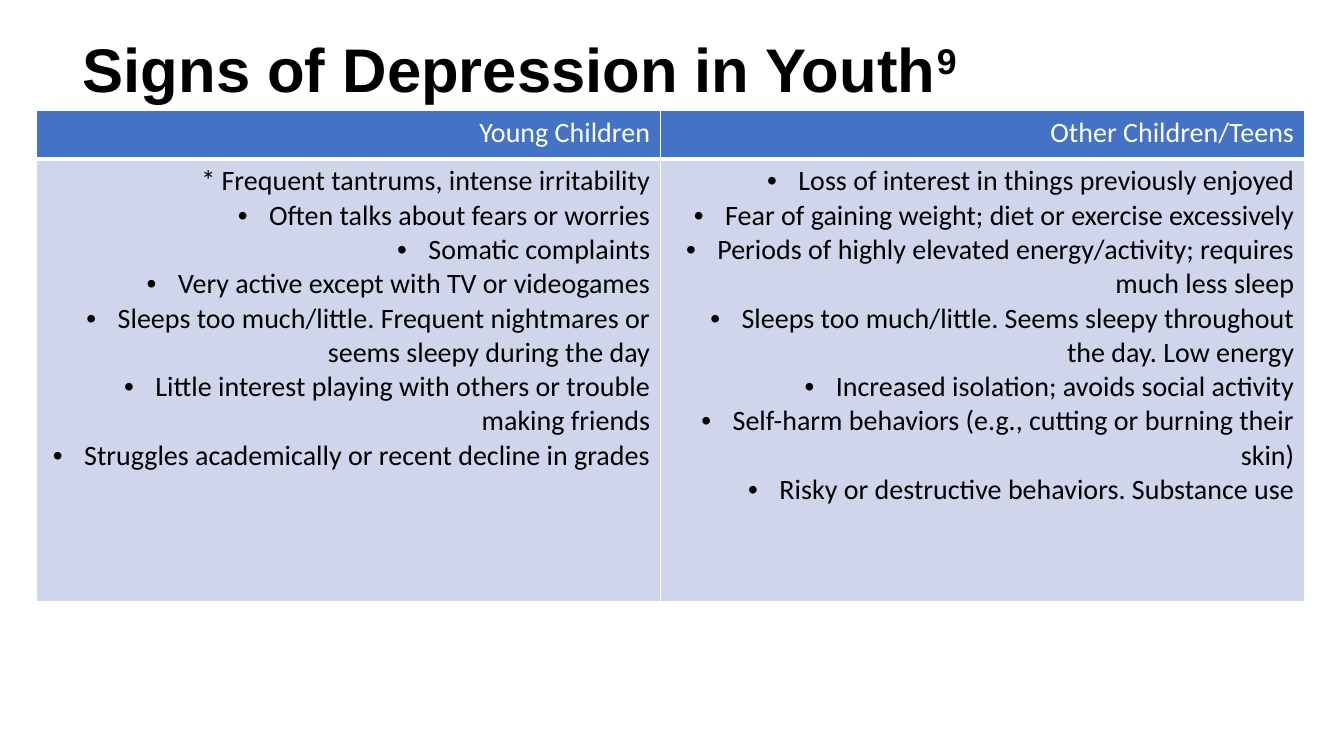
from lxml import etree
from pptx import Presentation
from pptx import util as u
from pptx.dml import color
from pptx.enum import text
from pptx.oxml import ns


def rgb(code):
    return color.RGBColor.from_string(code)


class Deck:
    face, size = "Calibri", 20
    ink, paper, head, body = "000000", "FFFFFF", "4472C4", "CFD5EA"
    indent = u.Cm(0.79)

    def __init__(self, wide, high):
        self.prs = Presentation()
        self.prs.slide_width, self.prs.slide_height = u.Cm(wide), u.Cm(high)
        self.slide = self.prs.slides.add_slide(self.prs.slide_layouts[6])

    def style(self, par, face, size, tint, bold=False):
        font = par.font
        font.name, font.size, font.bold = face, u.Pt(size), bold
        font.color.rgb = rgb(tint)

    def title(self, words, note, left, top, wide, high):
        box = self.slide.shapes.add_textbox(*map(u.Cm, (left, top, wide, high)))
        frame = box.text_frame
        frame.word_wrap = True
        frame.vertical_anchor = text.MSO_ANCHOR.MIDDLE
        frame.margin_left = frame.margin_right = u.Cm(0.13)
        frame.margin_top = frame.margin_bottom = u.Cm(0.13)
        par = frame.paragraphs[0]
        par.line_spacing = 0.9
        par.add_run().text = words
        mark = par.add_run()
        mark.text = note
        mark._r.get_or_add_rPr().set("baseline", "30000")
        self.style(par, "Arial", 44, self.ink, True)

    def bullet(self, par):
        props = par._p.get_or_add_pPr()
        props.set("marL", str(self.indent))
        props.set("indent", str(-self.indent))
        etree.SubElement(props, ns.qn("a:buFont")).set("typeface", "Arial")
        etree.SubElement(props, ns.qn("a:buChar")).set("char", "•")

    def edge(self, cell, side, points):
        props = cell._tc.get_or_add_tcPr()
        line = etree.SubElement(props, ns.qn("a:ln" + side), w=str(u.Pt(points)))
        fill = etree.SubElement(line, ns.qn("a:solidFill"))
        etree.SubElement(fill, ns.qn("a:srgbClr"), val=self.paper)

    def cell(self, cell, lines, fill, tint, edges):
        for side, points in edges.items():
            self.edge(cell, side, points)
        cell.fill.solid()
        cell.fill.fore_color.rgb = rgb(fill)
        frame = cell.text_frame
        for i, (words, dot) in enumerate(lines):
            par = frame.add_paragraph() if i else frame.paragraphs[0]
            par.text = words
            par.alignment = text.PP_ALIGN.RIGHT
            if dot:
                self.bullet(par)
            self.style(par, self.face, self.size, tint)

    def table(self, heads, lists, left, top, cols, rows):
        place = map(u.Cm, (left, top, sum(cols), sum(rows)))
        grid = self.slide.shapes.add_table(len(rows), len(cols), *place).table
        grid.first_row = grid.horz_banding = False
        for row, high in zip(grid.rows, rows):
            row.height = u.Cm(high)
        for i, wide in enumerate(cols):
            grid.columns[i].width = u.Cm(wide)
            self.cell(grid.cell(0, i), [(heads[i], False)], self.head,
                      self.paper, {"L": 1, "R": 1, "T": 1, "B": 3})
            self.cell(grid.cell(1, i), lists[i], self.body,
                      self.ink, {"L": 1, "R": 1, "T": 3, "B": 1})


def dots(*lines):
    return [(line, True) for line in lines]


def main():
    deck = Deck(33.87, 19.05)

    # Title with its reference number
    deck.title("Signs of Depression in Youth", "9", 1.96, 0, 29.21, 3.68)

    # Signs by age group
    young = [("* Frequent tantrums, intense irritability", False)] + dots(
        "Often talks about fears or worries",
        "Somatic complaints",
        "Very active except with TV or videogames",
        "Sleeps too much/little. Frequent nightmares or seems sleepy during the day",
        "Little interest playing with others or trouble making friends",
        "Struggles academically or recent decline in grades")
    teens = dots(
        "Loss of interest in things previously enjoyed",
        "Fear of gaining weight; diet or exercise excessively",
        "Periods of highly elevated energy/activity; requires much less sleep",
        "Sleeps too much/little. Seems sleepy throughout the day. Low energy",
        "Increased isolation; avoids social activity",
        "Self-harm behaviors (e.g., cutting or burning their skin)",
        "Risky or destructive behaviors. Substance use")
    deck.table(("Young Children", "Other Children/Teens"), (young, teens),
               0.92, 2.79, (15.72, 16.23), (1.22, 11.15))

    deck.prs.save("out.pptx")


if __name__ == "__main__":
    main()
